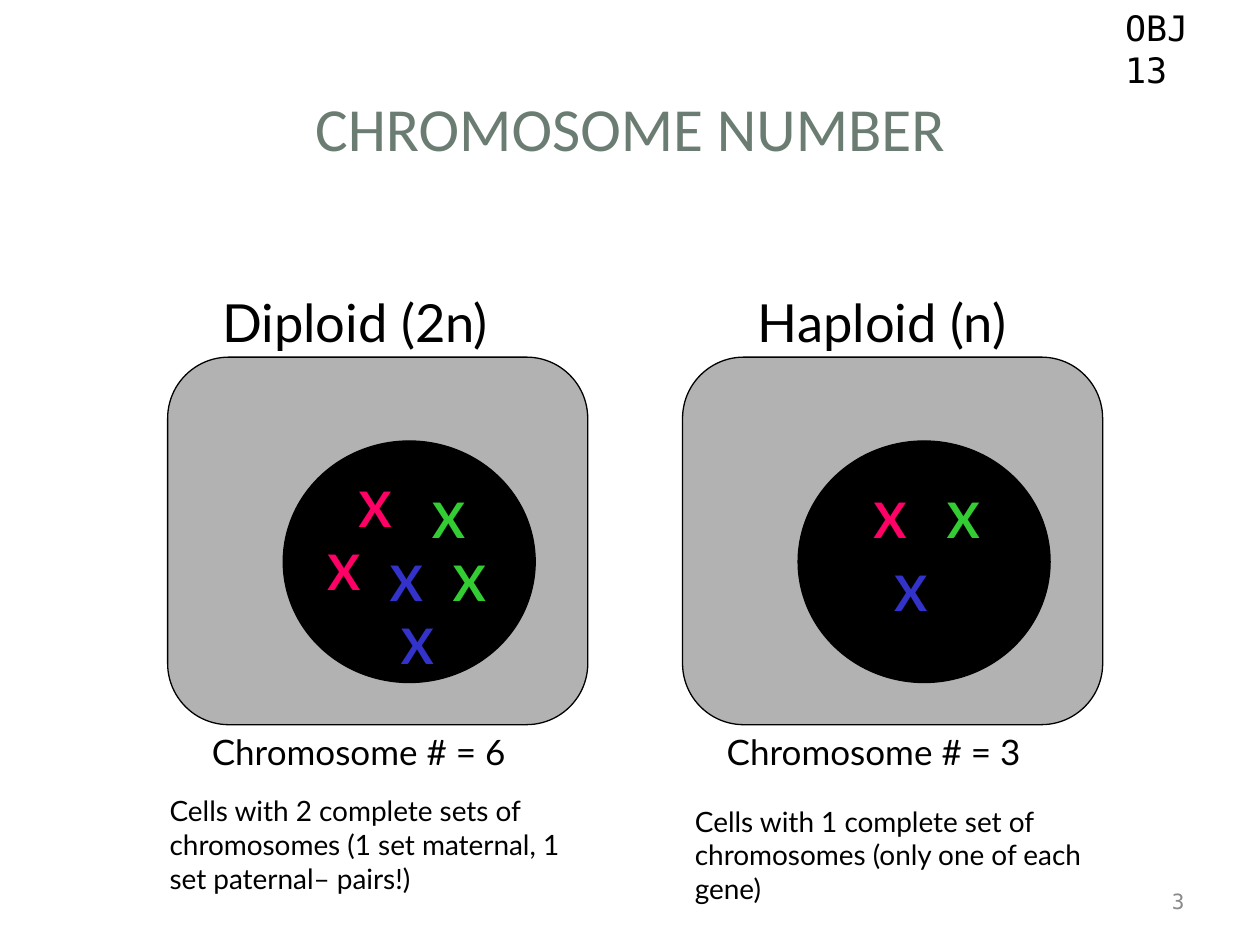
from pptx import Presentation
from pptx.dml.color import RGBColor
from pptx.enum.shapes import MSO_SHAPE as Shape
from pptx.enum.text import MSO_ANCHOR as Anchor, MSO_AUTO_SIZE as AutoSize, PP_ALIGN as Align
from pptx.util import Cm, Pt

BLACK = RGBColor(0x00, 0x00, 0x00)
CYTOPLASM = RGBColor(0xB2, 0xB2, 0xB2)
SAGE = RGBColor(0x6B, 0x7D, 0x72)
MUTED = RGBColor(0x89, 0x89, 0x89)
PINK = RGBColor(0xFF, 0x00, 0x66)
GREEN = RGBColor(0x33, 0xCC, 0x33)
BLUE = RGBColor(0x33, 0x33, 0xCC)

CELL_TOP = 7.2
TITLE = {"name": "Calibri", "size": Pt(35)}
HEADING = {"name": "Lato", "size": Pt(30)}
COUNT = {"name": "Lato", "size": Pt(20)}
NOTE = {"name": "Lato", "size": Pt(16)}
CHROMOSOME = {"name": "Lato", "size": Pt(28), "bold": True}
OBJECTIVE = {"name": "DejaVu Sans Mono", "size": Pt(20)}
NUMBER = {"name": "DejaVu Sans Mono", "size": Pt(12)}

CELLS = [
    {
        "left": 3.38,
        "heading": ("Diploid (2n)", 0.85, 7.2),
        "count": "Chromosome # = 6",
        "note": ("Cells with 2 complete sets of chromosomes "
                 "(1 set maternal, 1 set paternal– pairs!)", -0.21, 15.88, 9.1),
        "chromosomes": [
            (PINK, 2.97, 3.6), (PINK, 3.6, 2.33),
            (GREEN, 5.08, 2.54), (GREEN, 5.5, 3.81),
            (BLUE, 4.45, 5.08), (BLUE, 4.23, 3.81),
        ],
    },
    {
        "left": 13.76,
        "heading": ("Haploid (n)", 1.27, 6.56),
        "count": "Chromosome # = 3",
        "note": ("Cells with 1 complete set of chromosomes "
                 "(only one of each gene)", 0, 16.09, 9.53),
        "chromosomes": [(PINK, 3.6, 2.54), (GREEN, 5.08, 2.54), (BLUE, 4.02, 4.02)],
    },
]


def write(frame, text, style, color=BLACK, align=Align.LEFT):
    """Put one formatted run of text into a frame."""
    para = frame.paragraphs[0]
    para.alignment = align
    span = para.add_run()
    span.text = text
    for key, value in style.items():
        setattr(span.font, key, value)
    span.font.color.rgb = color


def add_label(page, text, area, style, color=BLACK, align=Align.LEFT, anchor=Anchor.TOP):
    """Add a wrapping text box at an area given in centimetres."""
    frame = page.shapes.add_textbox(*map(Cm, area)).text_frame
    settings = {"word_wrap": True, "auto_size": AutoSize.NONE, "vertical_anchor": anchor}
    for key, value in settings.items():
        setattr(frame, key, value)
    write(frame, text, style, color, align)


def add_body(page, kind, area, fill):
    """Add a filled, thinly outlined shape at an area given in centimetres."""
    body = page.shapes.add_shape(kind, *map(Cm, area))
    body.shadow.inherit = False
    body.fill.solid()
    body.fill.fore_color.rgb = fill
    body.line.color.rgb = BLACK
    body.line.width = Pt(0.75)


def add_cell(page, cell):
    """Draw a cell with its nucleus, chromosomes and captions."""
    left = cell["left"]
    add_body(page, Shape.ROUNDED_RECTANGLE, (left, CELL_TOP, 8.47, 7.41), CYTOPLASM)
    add_body(page, Shape.OVAL, (left + 2.33, CELL_TOP + 1.69, 5.08, 4.87), BLACK)
    for color, across, down in cell["chromosomes"]:
        add_label(page, "X", (left + across, CELL_TOP + down, 1.48, 1.45), CHROMOSOME, color)
    heading, shift, width = cell["heading"]
    add_label(page, heading, (left + shift, 5.72, width, 1.52), HEADING)
    add_label(page, cell["count"], (left + 0.64, 14.61, 7.83, 1.1), COUNT)
    note, shift, top, width = cell["note"]
    add_label(page, note, (left + shift, top, width, 2.29), NOTE)


def add_title(page, text):
    """Place and format the title placeholder."""
    title = page.shapes.title
    area = {"left": Cm(1.91), "top": Cm(1.7), "width": Cm(21.59), "height": Cm(3.18)}
    for key, value in area.items():
        setattr(title, key, value)
    title.text_frame.vertical_anchor = Anchor.TOP
    write(title.text_frame, text, TITLE, SAGE, Align.CENTER)


def main():
    """Build and save the deck."""
    deck = Presentation()
    deck.slide_width, deck.slide_height = Cm(25.4), Cm(19.05)
    page = deck.slides.add_slide(deck.slide_layouts[5])
    add_title(page, "CHROMOSOME NUMBER")
    for cell in CELLS:
        add_cell(page, cell)
    add_label(page, "OBJ 13", (22.43, 0, 2.97, 1.1), OBJECTIVE)
    add_label(page, "3", (18.21, 17.65, 5.92, 1.02), NUMBER, MUTED, Align.RIGHT, Anchor.MIDDLE)
    deck.save("out.pptx")


if __name__ == "__main__":
    main()
